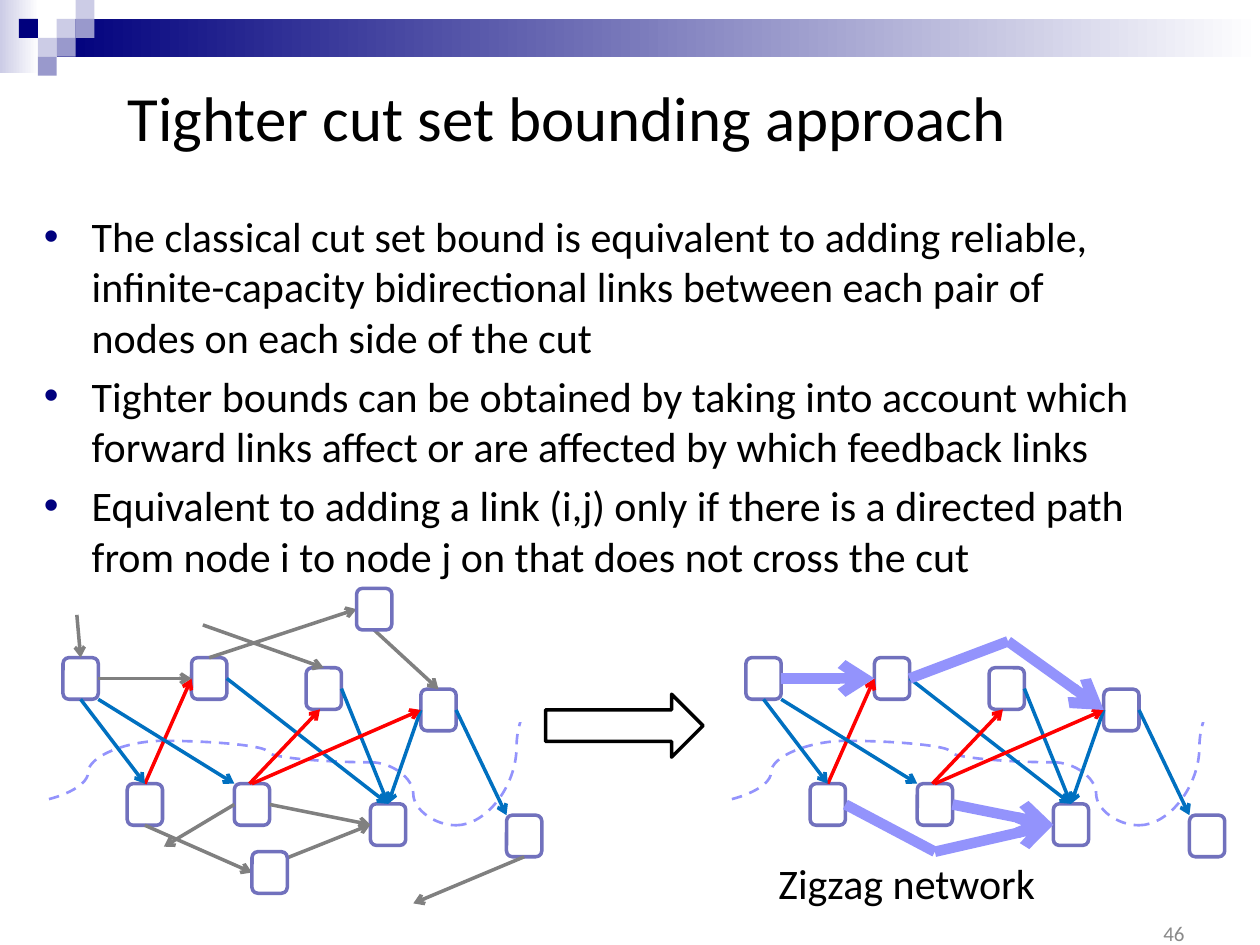
import pptx
import pptx.util
import pptx.dml.color
import pptx.enum.dml
import pptx.enum.shapes
import pptx.enum.text
import pptx.oxml
import pptx.oxml.ns

Inches, Pt = pptx.util.Inches, pptx.util.Pt
KIND = pptx.enum.shapes.MSO_SHAPE
JOIN = pptx.enum.shapes.MSO_CONNECTOR
ALIGN = pptx.enum.text.PP_ALIGN
ANCHOR = pptx.enum.text.MSO_ANCHOR
TOP, LEFT, BOTTOM, RIGHT = range(4)
NAVY, PALE, MID, WHITE, BLACK = "00007D", "CCCCE6", "9999CC", "FFFFFF", "000000"
GREY, RED, BLUE, LILAC, EDGE = "808080", "FF0000", "0070C0", "9393FC", "7171BD"
NODE_W, NODE_H = 0.28, 0.33

BULLETS = [
    "The classical cut set bound is equivalent to adding reliable, infinite-capacity "
    "bidirectional links between each pair of nodes on each side of the cut",
    "Tighter bounds can be obtained by taking into account which forward links affect "
    "or are affected by which feedback links",
    "Equivalent to adding a link (i,j) only if there is a directed path from node i "
    "to node j on that does not cross the cut",
]
NODES = {"a": (0.5, 0.55), "b": (1.01, 1.55), "c": (1.52, 0.55), "d": (1.86, 1.55),
         "e": (2.43, 0.63), "f": (3.34, 0.8), "g": (2.94, 1.71), "h": (4.02, 1.8)}
EXTRA = {"i": (2, 2.09), "j": (2.83, 0)}
CUT = [(0.1, 1.71), (1.3, 1.21), (2.94, 1.38), (3.62, 1.88), (4.58, 0.63)]
MASKS = [(0.04, 0.8, 0.3, 1.21), (4.01, 0.63, 0.57, 0.42)]
CROSS = [
    (("b", TOP), ("c", LEFT), RED),
    ((0.78, 0.88), (1.86, 1.55), BLUE),
    (("a", BOTTOM), ("b", TOP), BLUE),
    (("c", RIGHT), ("g", TOP), BLUE),
    (("e", RIGHT), ("g", TOP), BLUE),
    (("f", LEFT), ("g", TOP), BLUE),
    (("f", RIGHT), (4.02, 1.8), BLUE),
    ((1.98, 1.55), (2.54, 0.96), RED),
    (("d", TOP), ("f", LEFT), RED),
]
INNER = [
    (("a", RIGHT), ("c", LEFT), True),
    ((0.61, 0.21), ("a", TOP), True),
    ((1.61, 0.29), ("e", TOP), True),
    (("c", TOP), ("j", LEFT), True),
    (("d", LEFT), (1.3, 2.05), True),
    (("i", TOP, 0.16), ("g", LEFT), True),
    (("h", BOTTOM), (3.28, 2.5), True),
    (("j", BOTTOM), ("f", TOP), True),
    (("d", RIGHT), ("g", LEFT), True),
    (("b", BOTTOM), ("i", LEFT), True),
]
INNER[5] = ((2, 2.25), ("g", LEFT), True)
ZIGZAG = [
    (("a", RIGHT), ("c", LEFT), True),
    (("c", RIGHT), (2.58, 0.42), False),
    ((2, 2.09), ("g", LEFT), True),
    ((2.58, 0.42), ("f", LEFT), True),
    (("d", RIGHT), ("g", LEFT), True),
    (("b", RIGHT), (2, 2.09), False),
]


def tint(code):
    """Turn a hex string into a colour."""
    return pptx.dml.color.RGBColor.from_string(code)


def block(slide, kind, box, fill, line=None):
    """Add a filled preset shape, with a 2 pt outline if a line colour is given."""
    shape = slide.shapes.add_shape(kind, *map(Inches, box))
    shape.shadow.inherit = False
    if isinstance(fill, tuple):
        shape.fill.gradient()
        shape.fill.gradient_angle = 0
        for stop, code in zip(shape.fill.gradient_stops, fill):
            stop.color.rgb = tint(code)
    else:
        shape.fill.solid()
        shape.fill.fore_color.rgb = tint(fill)
    if line:
        shape.line.color.rgb = tint(line)
        shape.line.width = Pt(2)
    else:
        shape.line.fill.background()
    return shape


def link(slide, kind, start, end, color, width, dash=False, head=False):
    """Add a connector between two points."""
    line = slide.shapes.add_connector(kind, *map(Inches, (*start, *end)))
    line.line.color.rgb = tint(color)
    line.line.width = Pt(width)
    if dash:
        line.line.dash_style = pptx.enum.dml.MSO_LINE.DASH
    if head:
        tail = pptx.oxml.parse_xml(
            '<a:tailEnd %s type="arrow"/>' % pptx.oxml.ns.nsdecls("a"))
        line.line._get_or_add_ln().append(tail)
    line._element.spPr.append(
        pptx.oxml.parse_xml("<a:effectLst %s/>" % pptx.oxml.ns.nsdecls("a")))
    return line


def write(slide, box, texts, size, color=BLACK, align=ALIGN.LEFT, anchor=ANCHOR.TOP):
    """Add a wrapped text box with one run for each paragraph."""
    frame = slide.shapes.add_textbox(*map(Inches, box)).text_frame
    frame.word_wrap = True
    frame.vertical_anchor = anchor
    for count, text in enumerate(texts):
        para = frame.add_paragraph() if count else frame.paragraphs[0]
        para.alignment = align
        run = para.add_run()
        run.text = text
        run.font.name = "Calibri"
        run.font.size = Pt(size)
        run.font.color.rgb = tint(color)
    return frame


def banner(slide, left, top, width):
    """Draw the gradient band and its chequered corner."""
    block(slide, KIND.RECTANGLE, (left, top, 0.31, 0.58), (PALE, WHITE))
    block(slide, KIND.RECTANGLE, (left + 0.45, top + 0.15, width - 0.45, 0.3),
          (NAVY, WHITE))
    tiles = [(3, 1, PALE), (4, 0, PALE), (4, 1, MID), (2, 2, PALE),
             (1, 1, NAVY), (3, 2, MID), (2, 3, MID)]
    for col, row, code in tiles:
        block(slide, KIND.RECTANGLE,
              (left + col * 0.15, top + row * 0.15, 0.15, 0.15), code)


def points(slide, box):
    """Write the bulleted list."""
    frame = write(slide, box, BULLETS, 24)
    for para in frame.paragraphs:
        para.space_before = Pt(5)
        props = para._p.get_or_add_pPr()
        props.set("marL", str(Inches(0.38)))
        props.set("indent", str(-Inches(0.38)))
        for tag in ('buClr %s><a:srgbClr val="' + NAVY + '"/></a:buClr>',
                    'buFont %s typeface="Arial"/>', 'buChar %s char="•"/>'):
            props.append(pptx.oxml.parse_xml(
                "<a:" + tag % pptx.oxml.ns.nsdecls("a")))


def network(slide, left, top, nodes, inner, color, width):
    """Draw the cut, the nodes and the links of one network."""
    def place(spot):
        return left + spot[0], top + spot[1]

    def tie(start, end, code, size, head):
        ends = [(left, top) if isinstance(spot[0], str) else place(spot)
                for spot in (start, end)]
        line = link(slide, JOIN.STRAIGHT, *ends, code, size, head=head)
        for spot, join in ((start, line.begin_connect), (end, line.end_connect)):
            if isinstance(spot[0], str):
                join(made[spot[0]], spot[1])

    for start, end in zip(CUT, CUT[1:]):
        link(slide, JOIN.CURVE, place(start), place(end), LILAC, 1.5, dash=True)
    for x, y, wide, high in MASKS:
        block(slide, KIND.RECTANGLE, (*place((x, y)), wide, high), WHITE, WHITE)
    made = {name: block(slide, KIND.ROUNDED_RECTANGLE,
                        (*place(spot), NODE_W, NODE_H), WHITE, EDGE)
            for name, spot in nodes.items()}
    for start, end, code in CROSS:
        tie(start, end, code, 2, True)
    for start, end, head in inner:
        tie(start, end, color, width, head)
    for name in EXTRA.keys() & nodes.keys():
        slide.shapes._spTree.append(made[name]._element)


def main():
    """Build the slide and save it."""
    deck = pptx.Presentation()
    deck.slide_width, deck.slide_height = Inches(10), Inches(7.5)
    slide = deck.slides.add_slide(deck.slide_layouts[6])
    banner(slide, 0, 0, 10)
    write(slide, (0, 0.3, 9, 1.25), ["Tighter cut set bounding approach"], 36,
          align=ALIGN.CENTER, anchor=ANCHOR.MIDDLE)
    points(slide, (0.25, 1.62, 9, 4.95))
    write(slide, (7.17, 7.21, 2.33, 0.4), ["46"], 12, "898989",
          ALIGN.RIGHT, ANCHOR.MIDDLE)
    network(slide, 5.42, 4.67, NODES, ZIGZAG, LILAC, 6)
    network(slide, 0, 4.67, {**NODES, **EXTRA}, INNER, GREY, 2)
    block(slide, KIND.RIGHT_ARROW, (4.33, 5.51, 1.25, 0.5), WHITE, BLACK)
    write(slide, (6.08, 6.76, 2.67, 0.51), ["Zigzag network"], 24)
    deck.save("out.pptx")


if __name__ == "__main__":
    main()
